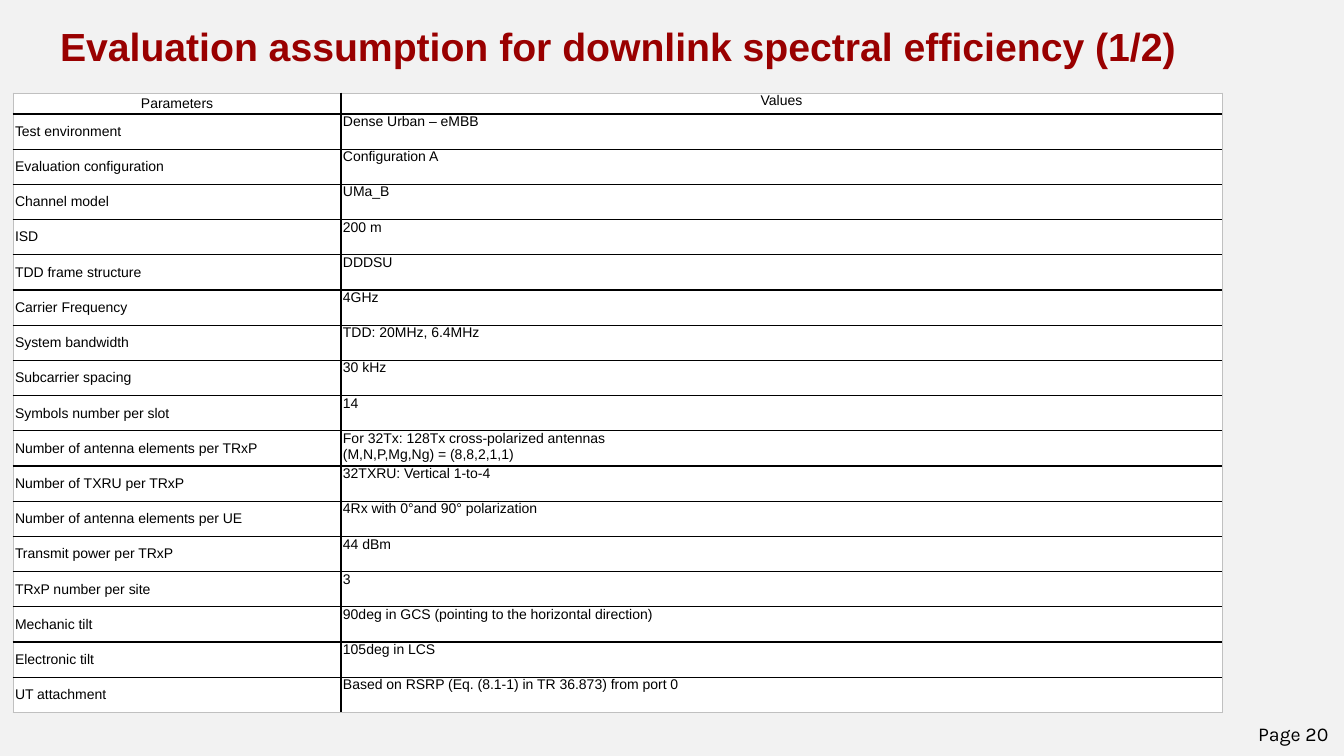
import pptx
import pptx.util
import pptx.dml.color
import pptx.enum.text
import pptx.oxml
import pptx.oxml.ns

# Content
TITLE = "Evaluation assumption for downlink spectral efficiency (1/2)"
PAGE = "Page 20"
ROWS = [
    ("Parameters", "Values"),
    ("Test environment", "Dense Urban – eMBB"),
    ("Evaluation configuration", "Configuration A"),
    ("Channel model", "UMa_B"),
    ("ISD", "200 m"),
    ("TDD frame structure", "DDDSU"),
    ("Carrier Frequency", "4GHz"),
    ("System bandwidth", "TDD: 20MHz, 6.4MHz"),
    ("Subcarrier spacing", "30 kHz"),
    ("Symbols number per slot", "14"),
    ("Number of antenna elements per TRxP",
     "For 32Tx: 128Tx cross-polarized antennas\n(M,N,P,Mg,Ng) = (8,8,2,1,1)"),
    ("Number of TXRU per TRxP", "32TXRU: Vertical 1-to-4"),
    ("Number of antenna elements per UE", "4Rx with 0°and 90° polarization"),
    ("Transmit power per TRxP", "44 dBm"),
    ("TRxP number per site", "3"),
    ("Mechanic tilt", "90deg in GCS (pointing to the horizontal direction)"),
    ("Electronic tilt", "105deg in LCS"),
    ("UT attachment", "Based on RSRP (Eq. (8.1-1) in TR 36.873) from port 0"),
]

# Look and measures, in px
RGB = pptx.dml.color.RGBColor
BACK = RGB(0xF2, 0xF2, 0xF2)
RED = RGB(0x99, 0x00, 0x00)
BLACK = RGB(0x00, 0x00, 0x00)
WHITE = RGB(0xFF, 0xFF, 0xFF)
GRAY = RGB(0xC0, 0xC0, 0xC0)
COLS = (328, 881)
LEFT, TOP = 13, 93
HEAD, BODY = 21, 599
PAD = 2
SCALE = 914400 / 100.8
ANCHOR = pptx.enum.text.MSO_ANCHOR
ALIGN = pptx.enum.text.PP_ALIGN


def px(size):
    return pptx.util.Emu(round(size * SCALE))


def style(para, name, size, color, bold=False):
    font = para.font
    font.name, font.size, font.bold = name, pptx.util.Pt(size), bold
    font.color.rgb = color


def add_text(slide, box, text, pad, anchor):
    frame = slide.shapes.add_textbox(*map(px, box)).text_frame
    frame.word_wrap = True
    frame.margin_left = frame.margin_right = px(pad)
    frame.margin_top = frame.margin_bottom = 0
    frame.vertical_anchor = anchor
    frame.text = text
    return frame.paragraphs[0]


def add_edge(cell, side, color, width):
    line = pptx.oxml.parse_xml(
        f'<a:ln{side} {pptx.oxml.ns.nsdecls("a")} w="{pptx.util.Pt(width)}">'
        f'<a:solidFill><a:srgbClr val="{color}"/></a:solidFill></a:ln{side}>')
    cell._tc.get_or_add_tcPr().append(line)


def fill_cell(cell, text, row, col):
    cell.margin_left = cell.margin_right = px(PAD)
    cell.margin_top = cell.margin_bottom = 0
    cell.vertical_anchor = ANCHOR.TOP if col else ANCHOR.MIDDLE
    cell.text = text
    for para in cell.text_frame.paragraphs:
        style(para, "Arial", 10, BLACK)
        para.alignment = ALIGN.LEFT if row else ALIGN.CENTER
    # Outer edges are pale, inner ones black
    outer = {"L": col == 0, "R": col == len(COLS) - 1,
             "T": row == 0, "B": row == len(ROWS) - 1}
    for side, pale in outer.items():
        add_edge(cell, side, *((GRAY, 0.5) if pale else (BLACK, 1)))
    cell.fill.solid()
    cell.fill.fore_color.rgb = WHITE


def main():
    deck = pptx.Presentation()
    deck.slide_width, deck.slide_height = px(1344), px(756)
    slide = deck.slides.add_slide(deck.slide_layouts[6])
    slide.background.fill.solid()
    slide.background.fill.fore_color.rgb = BACK

    # Page number and title
    page = add_text(slide, (1258, 726, 76, 28), PAGE, 0, ANCHOR.TOP)
    page.line_spacing = 0.85
    style(page, "Karla", 14, BLACK)
    title = add_text(slide, (50, 22, 1166, 48), TITLE, 10, ANCHOR.MIDDLE)
    style(title, "Arial", 28, RED, True)

    # Table
    table = slide.shapes.add_table(
        len(ROWS), len(COLS), px(LEFT), px(TOP),
        px(sum(COLS)), px(HEAD + BODY)).table
    table.first_row = table.horz_banding = False
    for col, width in enumerate(COLS):
        table.columns[col].width = px(width)
    for row, texts in enumerate(ROWS):
        table.rows[row].height = px(BODY / (len(ROWS) - 1) if row else HEAD)
        for col, text in enumerate(texts):
            fill_cell(table.cell(row, col), text, row, col)

    deck.save("out.pptx")


if __name__ == "__main__":
    main()
